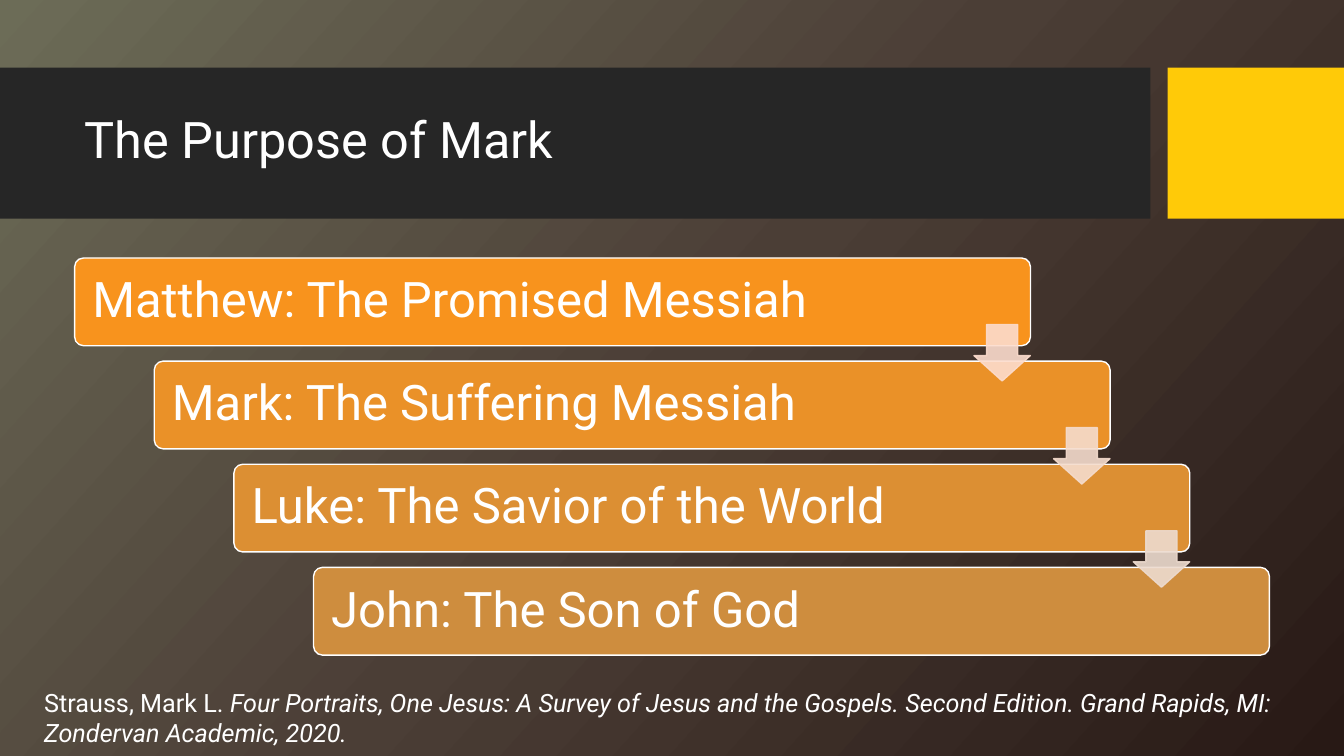
from copy import deepcopy

from lxml.etree import SubElement
from pptx import Presentation
from pptx.dml.color import RGBColor
from pptx.enum.shapes import MSO_SHAPE as Preset
from pptx.enum.text import MSO_ANCHOR as Anchor, PP_ALIGN as Align
from pptx.oxml.ns import qn
from pptx.util import Inches, Pt

TITLE = "The Purpose of Mark"
GOSPELS = [
    ("Matthew: The Promised Messiah", "F8931D"),
    ("Mark: The Suffering Messiah", "EA9128"),
    ("Luke: The Savior of the World", "DC8F33"),
    ("John: The Son of God", "CE8D3E"),
]
ARROW_COLORS = ["FCDCCD", "F5DCCD", "EDDBCF"]
CITATION = [
    ("Strauss, Mark L. ", False),
    ("Four Portraits, One Jesus: A Survey of Jesus and the Gospels. Second Edition. "
     "Grand Rapids, MI: Zondervan Academic, 2020.", True),
]
COLORS = {"band": "262626", "accent": "FFCA08", "white": "FFFFFF"}
BACKDROP = [(0, "6C6C57"), (0.5, "4B3E36"), (1, "281915")]
FONT = "Roboto"

BAR_LEFT, BAR_TOP, BAR_WIDTH, BAR_HEIGHT = 0.74, 2.56, 9.48, 0.87
STEP_X, STEP_Y = 0.79, 1.023
ARROW_SIZE, ARROW_DROP = 0.56, 0.66


def set_text(shape, parts, size, anchor=Anchor.MIDDLE, inset=(0.1, 0.05), spacing=None):
    frame = shape.text_frame
    frame.word_wrap = True
    frame.vertical_anchor = anchor
    frame.margin_left = frame.margin_right = Inches(inset[0])
    frame.margin_top = frame.margin_bottom = Inches(inset[1])
    paragraph = frame.paragraphs[0]
    paragraph.alignment = Align.LEFT
    paragraph.line_spacing = spacing
    for words, italic in parts:
        run = paragraph.add_run()
        run.text = words
        run.font.name = FONT
        run.font.size = Pt(size)
        run.font.italic = italic
        run.font.color.rgb = RGBColor.from_string(COLORS["white"])


def add_block(slide, preset, box, color, line=None, adjustments=()):
    block = slide.shapes.add_shape(preset, *map(Inches, box))
    block.shadow.inherit = False
    block.fill.solid()
    block.fill.fore_color.rgb = RGBColor.from_string(color)
    if line:
        block.line.color.rgb = RGBColor.from_string(line)
        block.line.width = Pt(1)
    else:
        block.line.fill.background()
    for index, value in enumerate(adjustments):
        block.adjustments[index] = value
    return block


def paint_backdrop(slide):
    fill = slide.background.fill
    fill.gradient()
    fill.gradient_angle = 360 - 42
    stop_list = slide._element.find(".//" + qn("a:gsLst"))
    stop_list.append(deepcopy(stop_list[0]))
    for stop, (position, color) in zip(fill.gradient_stops, BACKDROP):
        stop.position = position
        stop.color.rgb = RGBColor.from_string(color)


def main():
    deck = Presentation()
    deck.slide_width, deck.slide_height = Inches(13.33), Inches(7.5)
    slide = deck.slides.add_slide(deck.slide_layouts[5])
    paint_backdrop(slide)

    add_block(slide, Preset.RECTANGLE, (0, 0.67, 11.41, 1.5), COLORS["band"])
    add_block(slide, Preset.RECTANGLE, (11.58, 0.67, 1.75, 1.5), COLORS["accent"])

    title = slide.shapes.title
    title.left, title.top, title.width, title.height = map(Inches, (0.74, 0.82, 10.51, 1.18))
    set_text(title, [(TITLE, False)], 36, spacing=0.9)
    slide.shapes._spTree.append(title._element)

    for index, (gospel, color) in enumerate(GOSPELS):
        box = (BAR_LEFT + index * STEP_X, BAR_TOP + index * STEP_Y, BAR_WIDTH, BAR_HEIGHT)
        bar = add_block(slide, Preset.ROUNDED_RECTANGLE, box, color, COLORS["white"], [0.1])
        set_text(bar, [(gospel, False)], 35, inset=(0.15, 0.15), spacing=0.9)

    for index, color in enumerate(ARROW_COLORS):
        left = BAR_LEFT + BAR_WIDTH - ARROW_SIZE + index * STEP_X
        top = BAR_TOP + ARROW_DROP + index * STEP_Y
        arrow = add_block(slide, Preset.DOWN_ARROW, (left, top, ARROW_SIZE, ARROW_SIZE),
                          color, color, [0.45, 0.55])
        arrow.adjustments[0], arrow.adjustments[1] = 0.55, 0.45
        for tint in arrow._element.spPr.iter(qn("a:srgbClr")):
            SubElement(tint, qn("a:alpha"), val="90000")

    citation = slide.shapes.add_textbox(*map(Inches, (0.34, 6.77, 13.16, 0.71)))
    set_text(citation, CITATION, 18, anchor=Anchor.TOP)

    deck.save("out.pptx")


if __name__ == "__main__":
    main()
